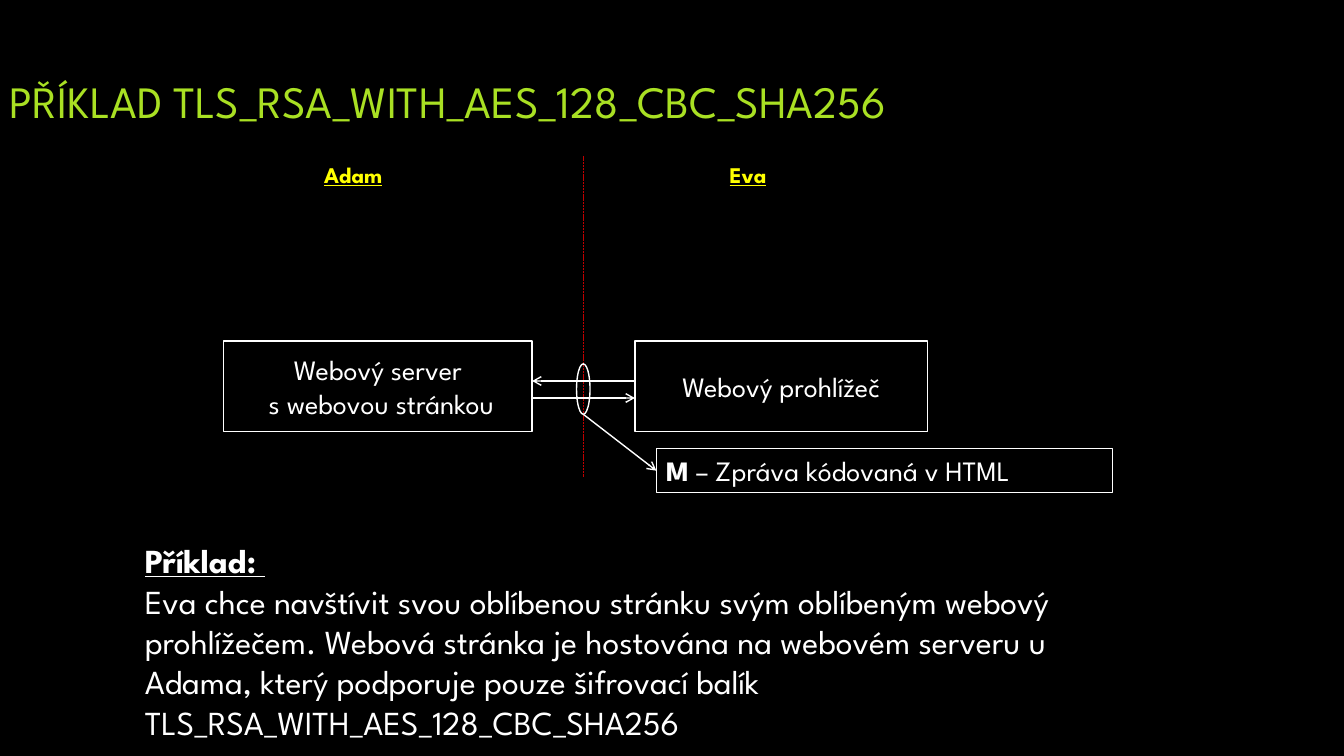
import pptx
import pptx.dml.color
import pptx.enum.dml
import pptx.enum.shapes
import pptx.enum.text
import pptx.oxml
import pptx.oxml.ns
import pptx.util

Cm = pptx.util.Cm
Pt = pptx.util.Pt
Align = pptx.enum.text.PP_ALIGN
Anchor = pptx.enum.text.MSO_ANCHOR
Preset = pptx.enum.shapes.MSO_SHAPE
Connector = pptx.enum.shapes.MSO_CONNECTOR

WHITE, GREEN, YELLOW, RED, BLACK = "FFFFFF", "A9E023", "FFFF00", "C00000", "000000"
SUITE = "TLS_RSA_WITH_AES_128_CBC_SHA256"


def color(hex_value):
    return pptx.dml.color.RGBColor.from_string(hex_value)


class SlideBuilder:
    font_name = "League Spartan"

    def __init__(self, presentation):
        self.slide = presentation.slides.add_slide(presentation.slide_layouts[6])
        fill = self.slide.background.fill
        fill.solid()
        fill.fore_color.rgb = color(BLACK)

    def set_text(self, shape, paragraphs, size=20, font_color=WHITE, bold=False,
                 underline=False, align=Align.LEFT, anchor=Anchor.TOP):
        frame = shape.text_frame
        frame.word_wrap = True
        frame.vertical_anchor = anchor
        for index, runs in enumerate(paragraphs):
            paragraph = frame.add_paragraph() if index else frame.paragraphs[0]
            paragraph.alignment = align
            for text, overrides in runs:
                for line_index, line in enumerate(text.split("\n")):
                    if line_index:
                        paragraph.add_line_break()
                    run = paragraph.add_run()
                    run.text = line
                    run.font.name = self.font_name
                    run.font.size = Pt(size)
                    run.font.color.rgb = color(font_color)
                    run.font.bold = overrides.get("bold", bold)
                    run.font.underline = overrides.get("underline", underline)

    def text(self, left, top, width, height, paragraphs, **text_format):
        box = self.slide.shapes.add_textbox(Cm(left), Cm(top), Cm(width), Cm(height))
        self.set_text(box, paragraphs, **text_format)
        return box

    def outline(self, preset, left, top, width, height, line_width=1):
        shape = self.slide.shapes.add_shape(
            preset, Cm(left), Cm(top), Cm(width), Cm(height))
        shape.shadow.inherit = False
        shape.fill.background()
        shape.line.color.rgb = color(WHITE)
        shape.line.width = Pt(line_width)
        return shape

    def box(self, left, top, width, height, paragraphs, line_width=1, **text_format):
        shape = self.outline(Preset.RECTANGLE, left, top, width, height, line_width)
        self.set_text(shape, paragraphs, **text_format)
        return shape

    def connector(self, start, end, kind=Connector.STRAIGHT, line_color=WHITE,
                  width=1, dash=None, arrow=None):
        connector = self.slide.shapes.add_connector(
            kind, *(Cm(value) for value in (*start, *end)))
        connector.line.color.rgb = color(line_color)
        connector.line.width = Pt(width)
        if dash:
            connector.line.dash_style = dash
        properties = connector._element.spPr
        namespace = pptx.oxml.ns.nsdecls("a")
        if arrow:
            properties.get_or_add_ln().append(
                pptx.oxml.parse_xml(f'<a:{arrow} {namespace} type="arrow"/>'))
        properties.append(pptx.oxml.parse_xml(f"<a:effectLst {namespace}/>"))
        return connector


def main():
    presentation = pptx.Presentation()
    presentation.slide_width = Cm(33.87)
    presentation.slide_height = Cm(19.05)
    builder = SlideBuilder(presentation)

    builder.text(0, 1.7, 33.87, 1.65, [[(f"PŘÍKLAD {SUITE}", {})]],
                 size=32, font_color=GREEN, anchor=Anchor.MIDDLE)
    for left, name in ((7.92, "Adam"), (18.14, "Eva")):
        builder.text(left, 3.94, 2.34, 0.94, [[(name, {})]],
                     size=16, font_color=YELLOW, bold=True, underline=True)

    divider = 14.7
    builder.connector((divider, 3.94), (divider, 12.01), line_color=RED, width=0.5,
                      dash=pptx.enum.dml.MSO_LINE.SQUARE_DOT)

    server_right, browser_left = 13.41, 16
    for left, width, label in (
            (5.64, server_right - 5.64, "Webový server\n s webovou stránkou"),
            (browser_left, 7.37, "Webový prohlížeč")):
        builder.box(left, 8.59, width, 2.29, [[(label, {})]],
                    align=Align.CENTER, anchor=Anchor.MIDDLE)
    for y, kind, arrow in ((10.03, Connector.ELBOW, "tailEnd"),
                           (9.6, Connector.STRAIGHT, "headEnd")):
        builder.connector((server_right, y), (browser_left, y), kind, arrow=arrow)

    builder.outline(Preset.OVAL, divider - 0.17, 9.17, 0.34, 1.27)
    message = builder.box(16.54, 11.3, 11.51, 1.12, [[
        ("M", {"bold": True}), (" – Zpráva kódovaná v HTML", {})]], line_width=0.75)
    pointer = builder.connector((16.54, 11.86), (divider, 10.44), arrow="headEnd")
    pointer.begin_connect(message, 1)

    builder.text(3.4, 13.49, 24.64, 5.38, [
        [("Příklad: ", {"bold": True, "underline": True})],
        [("Eva chce navštívit svou oblíbenou stránku svým oblíbeným webový "
          "prohlížečem. Webová stránka je hostována na webovém serveru u Adama, "
          f"který podporuje pouze šifrovací balík {SUITE}", {})],
    ], size=24)

    presentation.save("out.pptx")


if __name__ == "__main__":
    main()
